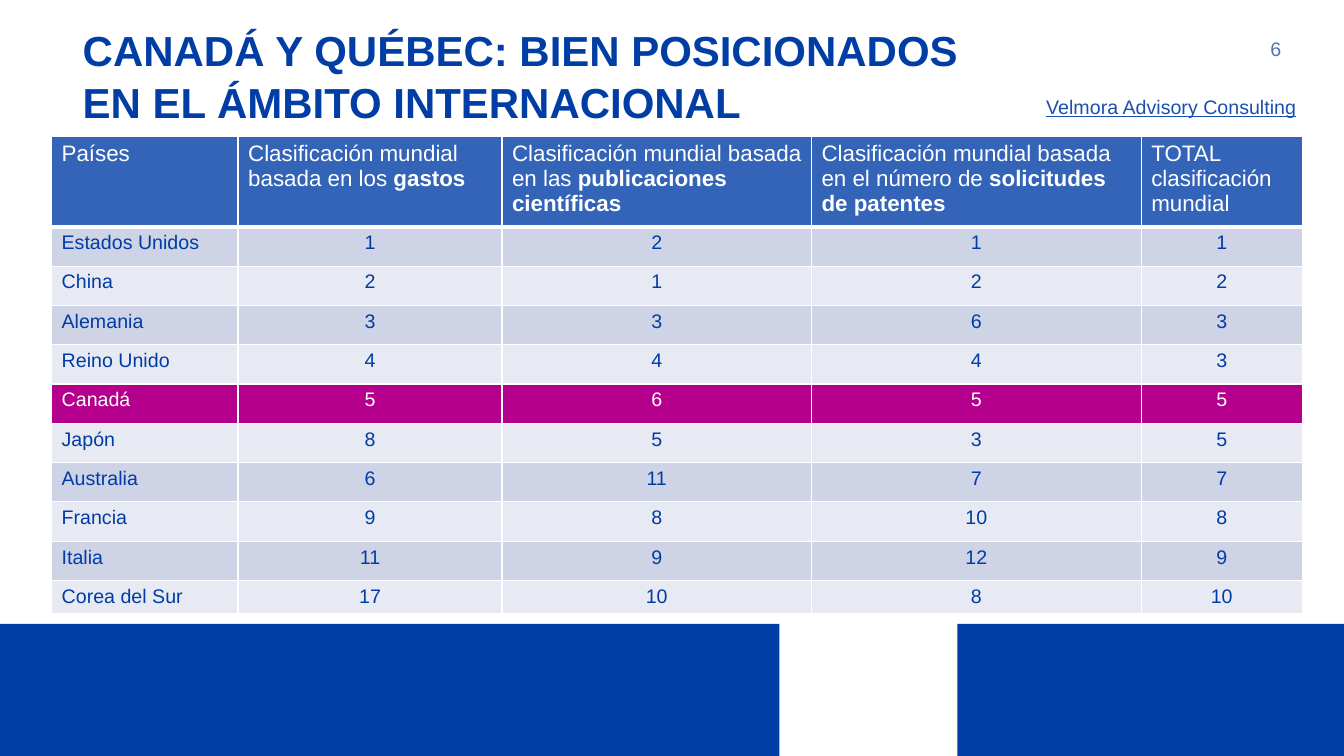
import lxml.etree
import pptx
import pptx.dml.color
import pptx.enum.shapes
import pptx.enum.text
import pptx.oxml.ns
import pptx.util

Cm = pptx.util.Cm
Pt = pptx.util.Pt
Align = pptx.enum.text.PP_ALIGN
Anchor = pptx.enum.text.MSO_ANCHOR

BLUE, TABLE_BLUE, HEADER_BLUE = "003DA5", "003CA5", "3364B7"
BANDS = ("E8EAF3", "CED3E6")
WHITE, MAGENTA = "FFFFFF", "B4008D"
HIGHLIGHTED = "Canadá"

COLUMN_WIDTHS = (4.7, 6.65, 7.8, 8.31, 4.06)
HEADER_HEIGHT, ROW_HEIGHT, LAST_HEIGHT = 2.16, 0.99, 0.84
# Each heading is a regular part followed by a bold part
HEADINGS = (
    ("Países", ""),
    ("Clasificación mundial basada en los ", "gastos"),
    ("Clasificación mundial basada en las ", "publicaciones científicas"),
    ("Clasificación mundial basada en el número de ", "solicitudes de patentes"),
    ("TOTAL\vclasificación mundial", ""),
)
# Country, then rank by spending, publications, patents and total
RANKINGS = (
    ("Estados Unidos", 1, 2, 1, 1),
    ("China", 2, 1, 2, 2),
    ("Alemania", 3, 3, 6, 3),
    ("Reino Unido", 4, 4, 4, 3),
    ("Canadá", 5, 6, 5, 5),
    ("Japón", 8, 5, 3, 5),
    ("Australia", 6, 11, 7, 7),
    ("Francia", 9, 8, 10, 8),
    ("Italia", 11, 9, 12, 9),
    ("Corea del Sur", 17, 10, 8, 10),
)


def colour(value):
    return pptx.dml.color.RGBColor.from_string(value)


class SlideBuilder:
    font_name = "Arial"

    def __init__(self, page):
        self.page = page

    def style(self, para, size, shade, bold=False, underline=False, align=Align.LEFT):
        para.alignment = align
        for span in para.runs:
            span.font.name = self.font_name
            span.font.size = Pt(size)
            span.font.bold = bold
            span.font.underline = underline
            span.font.color.rgb = colour(shade)

    def title(self, text, left, top, width, height):
        box = self.page.shapes.title
        box.left, box.top, box.width, box.height = map(Cm, (left, top, width, height))
        frame = box.text_frame
        frame.text = text
        frame.word_wrap = True
        frame.auto_size = pptx.enum.text.MSO_AUTO_SIZE.NONE
        frame.vertical_anchor = Anchor.BOTTOM
        frame.paragraphs[0].line_spacing = 1.03
        self.style(frame.paragraphs[0], 30, BLUE, bold=True)

    def label(self, text, left, top, width, height, shade, anchor, underline=False):
        box = self.page.shapes.add_textbox(*map(Cm, (left, top, width, height)))
        frame = box.text_frame
        frame.text = text
        frame.word_wrap = True
        frame.vertical_anchor = anchor
        self.style(frame.paragraphs[0], 14, shade, underline=underline, align=Align.RIGHT)

    def bar(self, left, top, width, height):
        bar = self.page.shapes.add_shape(
            pptx.enum.shapes.MSO_SHAPE.RECTANGLE, *map(Cm, (left, top, width, height)))
        bar.shadow.inherit = False
        bar.fill.solid()
        bar.fill.fore_color.rgb = colour(BLUE)
        bar.line.fill.background()

    def paint_cell(self, cell, fill, top_width=1, bottom_width=1):
        qn = pptx.oxml.ns.qn
        properties = cell._tc.get_or_add_tcPr()
        for side, width in (("L", 1), ("R", 1), ("T", top_width), ("B", bottom_width)):
            border = lxml.etree.SubElement(properties, qn(f"a:ln{side}"), w=str(Pt(width)))
            solid = lxml.etree.SubElement(border, qn("a:solidFill"))
            lxml.etree.SubElement(solid, qn("a:srgbClr"), val=WHITE)
        cell.fill.solid()
        cell.fill.fore_color.rgb = colour(fill)

    def ranking_table(self, left, top):
        heights = [HEADER_HEIGHT] + [ROW_HEIGHT] * (len(RANKINGS) - 1) + [LAST_HEIGHT]
        table = self.page.shapes.add_table(
            len(heights), len(COLUMN_WIDTHS), Cm(left), Cm(top),
            Cm(sum(COLUMN_WIDTHS)), Cm(sum(heights))).table
        for column, width in zip(table.columns, COLUMN_WIDTHS):
            column.width = Cm(width)
        for row, height in zip(table.rows, heights):
            row.height = Cm(height)

        # Heading row
        for index, (regular, strong) in enumerate(HEADINGS):
            cell = table.cell(0, index)
            cell.text = regular
            para = cell.text_frame.paragraphs[0]
            if strong:
                para.add_run().text = strong
            self.style(para, 16, WHITE)
            if strong:
                para.runs[-1].font.bold = True
            self.paint_cell(cell, HEADER_BLUE, bottom_width=3)

        # Country rows
        for number, ranking in enumerate(RANKINGS, start=1):
            highlighted = ranking[0] == HIGHLIGHTED
            fill = MAGENTA if highlighted else BANDS[number % 2]
            shade = WHITE if highlighted else TABLE_BLUE
            for index, value in enumerate(ranking):
                cell = table.cell(number, index)
                cell.text = str(value)
                align = Align.CENTER if index else Align.LEFT
                self.style(cell.text_frame.paragraphs[0], 14, shade, align=align)
                self.paint_cell(cell, fill, top_width=3 if number == 1 else 1)


def main():
    deck = pptx.Presentation()
    deck.slide_width, deck.slide_height = Cm(33.87), Cm(19.05)
    builder = SlideBuilder(deck.slides.add_slide(deck.slide_layouts[5]))

    # Bottom band
    builder.bar(24.13, 15.72, 9.74, 3.33)
    builder.bar(0, 15.72, 19.64, 3.33)

    # Heading, page number and source
    builder.title("CANADÁ Y QUÉBEC: BIEN POSICIONADOS\vEN EL ÁMBITO INTERNACIONAL",
                  1.83, 0.53, 28.4, 2.79)
    builder.label("6", 30.23, 0.53, 2.31, 1.4, "5374B0", Anchor.MIDDLE)
    builder.label("Velmora Advisory Consulting", 24.82, 2.26, 8.1, 0.86,
                  "1950AE", Anchor.TOP, underline=True)

    # Rankings
    builder.ranking_table(1.3, 3.43)
    deck.save("out.pptx")


if __name__ == "__main__":
    main()
